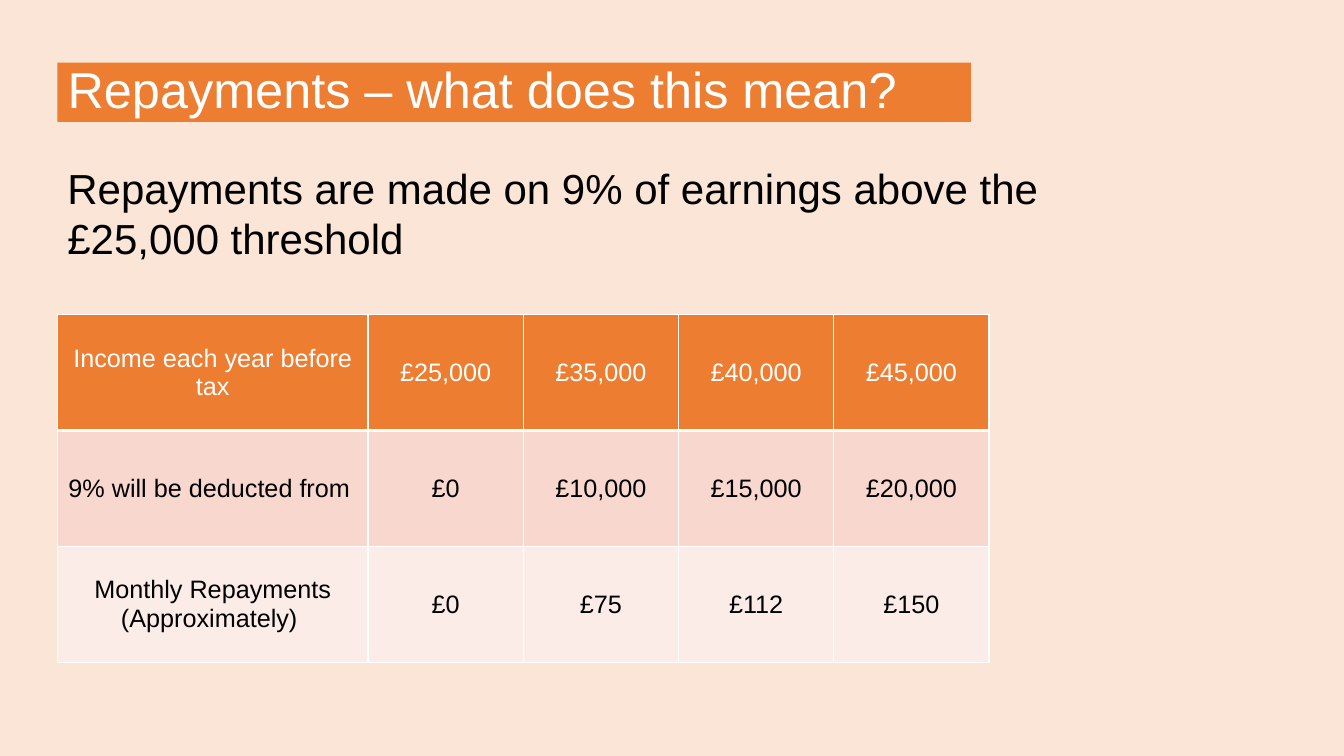
from typing import NamedTuple

from lxml import etree
from pptx import Presentation
from pptx.dml.color import RGBColor
from pptx.enum.text import MSO_ANCHOR, MSO_AUTO_SIZE, PP_ALIGN
from pptx.oxml.ns import qn
from pptx.util import Emu, Pt

LEFT, CENTER = PP_ALIGN.LEFT, PP_ALIGN.CENTER
TOP, MIDDLE = MSO_ANCHOR.TOP, MSO_ANCHOR.MIDDLE
NO_AUTOFIT = MSO_AUTO_SIZE.NONE
TITLE_ONLY = 5

ORANGE = RGBColor(0xED, 0x7D, 0x31)
PEACH = RGBColor(0xFB, 0xE5, 0xD6)
PINK = RGBColor(0xF8, 0xD7, 0xCE)
PALE_PINK = RGBColor(0xFC, 0xEC, 0xE8)
WHITE = RGBColor(0xFF, 0xFF, 0xFF)
BLACK = RGBColor(0, 0, 0)

FONT = "Arial"
EMU_PER_PX = 9144  # 100 px to the inch
MARGIN = 57


class Row(NamedTuple):
    texts: list[str]
    fill: RGBColor
    color: RGBColor
    bottom_pt: int = 1


ROWS = [
    Row(["Income each year before tax", "£25,000", "£35,000", "£40,000", "£45,000"],
        ORANGE, WHITE, bottom_pt=3),
    Row(["9% will be deducted from ", "£0", "£10,000", "£15,000", "£20,000"],
        PINK, BLACK),
    Row(["Monthly Repayments (Approximately) ", "£0", "£75", "£112", "£150"],
        PALE_PINK, BLACK),
]
COL_WIDTHS = [308] + [154] * 4
ROW_HEIGHT = 115


def px(n: int) -> Emu:
    return Emu(n * EMU_PER_PX)


def set_text(tf, text: str, size: int, color: RGBColor, align) -> None:
    tf.text = text
    tf.word_wrap = True
    p = tf.paragraphs[0]
    p.alignment = align
    font = p.runs[0].font
    font.name, font.size, font.color.rgb = FONT, Pt(size), color


def set_borders(cell, bottom_pt: int) -> None:
    """Draw white lines on the four sides of a cell."""
    tc_pr = cell._tc.get_or_add_tcPr()
    for i, side in enumerate("LRTB"):
        width = Pt(bottom_pt if side == "B" else 1)
        ln = etree.Element(qn(f"a:ln{side}"), w=str(width))
        fill = etree.SubElement(ln, qn("a:solidFill"))
        etree.SubElement(fill, qn("a:srgbClr"), val=str(WHITE))
        tc_pr.insert(i, ln)


def add_title(s) -> None:
    sp = s.shapes.title
    sp.left, sp.top, sp.width, sp.height = px(MARGIN), px(62), px(906), px(59)
    sp.fill.solid()
    sp.fill.fore_color.rgb = ORANGE
    tf = sp.text_frame
    set_text(tf, "Repayments – what does this mean?", 36, WHITE, LEFT)
    tf.auto_size = NO_AUTOFIT
    tf.vertical_anchor = MIDDLE
    tf.paragraphs[0].line_spacing = 0.9


def add_threshold_note(s) -> None:
    tf = s.shapes.add_textbox(px(MARGIN), px(156), px(1020), px(111)).text_frame
    set_text(tf, "Repayments are made on 9% of earnings above the £25,000 threshold",
             30, BLACK, LEFT)
    tf.vertical_anchor = TOP


def add_repayment_table(s) -> None:
    table = s.shapes.add_table(len(ROWS), len(COL_WIDTHS), px(MARGIN), px(312),
                               px(sum(COL_WIDTHS)), px(ROW_HEIGHT * len(ROWS))).table
    for col, width in zip(table.columns, COL_WIDTHS):
        col.width = px(width)
    for table_row, row in zip(table.rows, ROWS):
        table_row.height = px(ROW_HEIGHT)
        for cell, text in zip(table_row.cells, row.texts):
            set_text(cell.text_frame, text, 18, row.color, CENTER)
            cell.text_frame.paragraphs[0].runs[0].font.bold = False
            cell.vertical_anchor = MIDDLE
            cell.fill.solid()
            cell.fill.fore_color.rgb = row.fill
            set_borders(cell, row.bottom_pt)


def main() -> None:
    prs = Presentation()
    prs.slide_width, prs.slide_height = px(1333), px(750)
    s = prs.slides.add_slide(prs.slide_layouts[TITLE_ONLY])
    s.background.fill.solid()
    s.background.fill.fore_color.rgb = PEACH
    add_title(s)
    add_threshold_note(s)
    add_repayment_table(s)
    prs.save("out.pptx")


if __name__ == "__main__":
    main()
